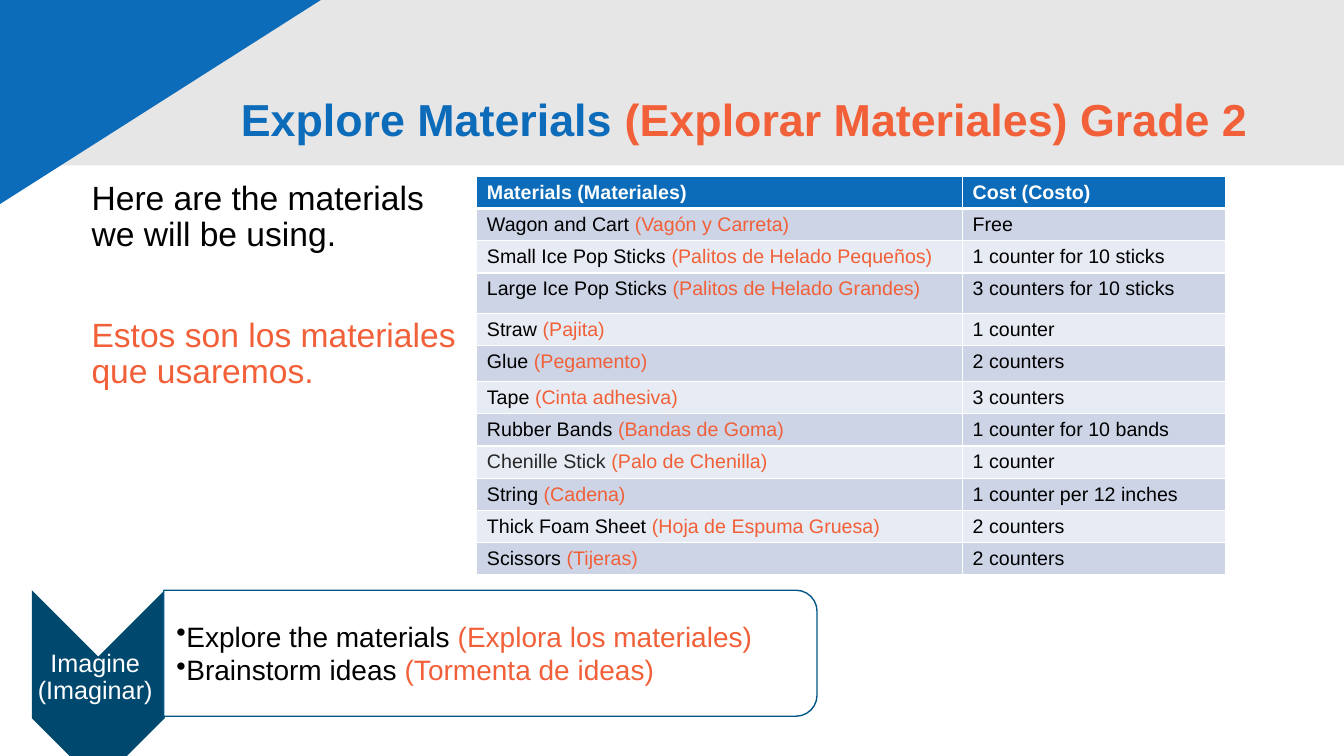
"""Build the bilingual slide that lists the Grade 2 materials and their cost."""
from dataclasses import dataclass

from lxml import etree
from pptx import Presentation
from pptx import util as u
from pptx.dml.color import RGBColor
from pptx.enum import shapes, text
from pptx.oxml import ns

FONT = "Arial"
BLUE, ORANGE, NAVY = "0D6CB9", "F16038", "00486E"
BLACK, WHITE = "000000", "FFFFFF"
BANDS = ("CCD4E6", "E7EBF3")


@dataclass(frozen=True)
class Box:
    left: float
    top: float
    width: float
    height: float

    def lengths(self) -> list:
        return [u.Pt(value) for value in (self.left, self.top, self.width, self.height)]


@dataclass(frozen=True)
class Figure:
    kind: shapes.MSO_SHAPE
    box: Box
    fill: str
    line: str = ""
    rotation: float = 0


@dataclass(frozen=True)
class Phrase:
    words: str
    color: str = BLACK


@dataclass(frozen=True)
class Material:
    english: str
    spanish: str
    cost: str
    color: str = BLACK
    height: float = 23


FIGURES = (
    Figure(shapes.MSO_SHAPE.RECTANGLE, Box(-18.7, -13.7, 978.7, 131.8), "E7E6E6"),
    Figure(shapes.MSO_SHAPE.RIGHT_TRIANGLE, Box(-74.2, -234.8, 387.4, 609.1), BLUE, rotation=90),
    Figure(shapes.MSO_SHAPE.CHEVRON, Box(0.7, 443.5, 139, 95), NAVY, rotation=90),
    Figure(shapes.MSO_SHAPE.ROUND_2_SAME_RECTANGLE, Box(305.3, 233.3, 90, 466.6), WHITE, "005786", 90),
)
STEP = Figure(shapes.MSO_SHAPE.RECTANGLE, Box(23, 471.5, 90, 25), NAVY)

MATERIALS = (
    Material("Wagon and Cart ", "(Vagón y Carreta)", "Free"),
    Material("Small Ice Pop Sticks ", "(Palitos de Helado Pequeños)", "1 counter for 10 sticks"),
    Material("Large Ice Pop Sticks ", "(Palitos de Helado Grandes)", "3 counters for 10 sticks", height=28.8),
    Material("Straw ", "(Pajita)", "1 counter"),
    Material("Glue ", "(Pegamento)", "2 counters", height=25.9),
    Material("Tape ", "(Cinta adhesiva)", "3 counters"),
    Material("Rubber Bands ", "(Bandas de Goma)", "1 counter for 10 bands"),
    Material("Chenille Stick ", "(Palo de Chenilla)", "1 counter", "272728"),
    Material("String ", "(Cadena)", "1 counter per 12 inches"),
    Material("Thick Foam Sheet ", "(Hoja de Espuma Gruesa)", "2 counters"),
    Material("Scissors ", "(Tijeras)", "2 counters"),
)


def rgb(color: str) -> RGBColor:
    return RGBColor.from_string(color)


def write(paragraph, phrases: list[Phrase], size: float, bold: bool = False) -> None:
    for phrase in phrases:
        run = paragraph.add_run()
        run.text = phrase.words
        run.font.name = FONT
        run.font.size = u.Pt(size)
        run.font.bold = bold
        run.font.color.rgb = rgb(phrase.color)


def draw_figure(slide, figure: Figure):
    shape = slide.shapes.add_shape(figure.kind, *figure.box.lengths())
    shape.shadow.inherit = False
    shape.rotation = figure.rotation
    shape.fill.solid()
    shape.fill.fore_color.rgb = rgb(figure.fill)
    if figure.line:
        shape.line.color.rgb = rgb(figure.line)
        shape.line.width = u.Pt(1)
    else:
        shape.line.fill.background()
    return shape


def set_frame(frame, anchor: text.MSO_ANCHOR, margins: tuple = (7.2, 3.6, 7.2, 3.6)) -> None:
    frame.word_wrap = True
    frame.vertical_anchor = anchor
    frame.margin_left, frame.margin_top, frame.margin_right, frame.margin_bottom = map(u.Pt, margins)


def add_frame(slide, box: Box, anchor: text.MSO_ANCHOR, margins: tuple = (7.2, 3.6, 7.2, 3.6)):
    frame = slide.shapes.add_textbox(*box.lengths()).text_frame
    set_frame(frame, anchor, margins)
    return frame


def style_cell(cell, fill: str, bottom: float) -> None:
    cell.fill.solid()
    cell.fill.fore_color.rgb = rgb(fill)
    properties = cell._tc.get_or_add_tcPr()
    for index, (side, width) in enumerate((("L", 1), ("R", 1), ("T", 1), ("B", bottom))):
        line = etree.Element(ns.qn(f"a:ln{side}"), w=str(u.Pt(width)))
        solid = etree.SubElement(line, ns.qn("a:solidFill"))
        etree.SubElement(solid, ns.qn("a:srgbClr"), val=WHITE)
        properties.insert(index, line)


def draw_table(slide) -> None:
    box = Box(340.6, 126, 535, 285)
    table = slide.shapes.add_table(len(MATERIALS) + 1, 2, *box.lengths()).table
    for column, width in zip(table.columns, (347, 188)):
        column.width = u.Pt(width)
    table.rows[0].height = u.Pt(23)
    for column, heading in enumerate(("Materials (Materiales)", "Cost (Costo)")):
        cell = table.cell(0, column)
        style_cell(cell, BLUE, 3)
        write(cell.text_frame.paragraphs[0], [Phrase(heading, WHITE)], 14, True)
    for row, material in enumerate(MATERIALS, 1):
        table.rows[row].height = u.Pt(material.height)
        name = [Phrase(material.english, material.color), Phrase(material.spanish, ORANGE)]
        for column, phrases in enumerate((name, [Phrase(material.cost)])):
            cell = table.cell(row, column)
            style_cell(cell, BANDS[(row - 1) % 2], 1)
            write(cell.text_frame.paragraphs[0], phrases, 14)


def draw_step(slide) -> None:
    frame = draw_figure(slide, STEP).text_frame
    set_frame(frame, text.MSO_ANCHOR.MIDDLE, (1.4, 1.4, 1.4, 1.4))
    paragraph = frame.paragraphs[0]
    paragraph.alignment = text.PP_ALIGN.CENTER
    paragraph.line_spacing = 0.9
    write(paragraph, [Phrase("Imagine (Imaginar)", WHITE)], 18)

    frame = add_frame(slide, Box(117.4, 425.5, 462.2, 81.4), text.MSO_ANCHOR.MIDDLE, (8.6, 0.7, 0.7, 0.7))
    tasks = (
        ("Explore the materials ", "(Explora los materiales)"),
        ("Brainstorm ideas ", "(Tormenta de ideas)"),
    )
    for index, (english, spanish) in enumerate(tasks):
        paragraph = frame.add_paragraph() if index else frame.paragraphs[0]
        properties = paragraph._p.get_or_add_pPr()
        properties.set("marL", "0")
        properties.set("indent", "0")
        etree.SubElement(properties, ns.qn("a:buChar"), char="•")
        write(paragraph, [Phrase(english), Phrase(spanish, ORANGE)], 20)


def draw_intro(slide) -> None:
    frame = add_frame(slide, Box(58.3, 126, 282.2, 245.5), text.MSO_ANCHOR.TOP)
    english = frame.paragraphs[0]
    english.line_spacing = 0.9
    write(english, [Phrase("Here are the materials we will be using.")], 24)
    spanish = frame.add_paragraph()
    spanish.line_spacing = 0.9
    spanish.space_before = u.Pt(46)
    write(spanish, [Phrase("Estos son los materiales que usaremos.", ORANGE)], 24)


def draw_title(slide) -> None:
    frame = add_frame(slide, Box(164.9, 34.6, 788.4, 104.4), text.MSO_ANCHOR.MIDDLE)
    paragraph = frame.paragraphs[0]
    paragraph.line_spacing = 0.9
    title = [Phrase("Explore Materials ", BLUE), Phrase("(Explorar Materiales) Grade 2", ORANGE)]
    write(paragraph, title, 32, True)


def main() -> None:
    presentation = Presentation()
    presentation.slide_width, presentation.slide_height = u.Pt(960), u.Pt(540)
    slide = presentation.slides.add_slide(presentation.slide_layouts[6])
    for figure in FIGURES:
        draw_figure(slide, figure)
    draw_table(slide)
    draw_step(slide)
    draw_intro(slide)
    draw_title(slide)
    presentation.save("out.pptx")


if __name__ == "__main__":
    main()
